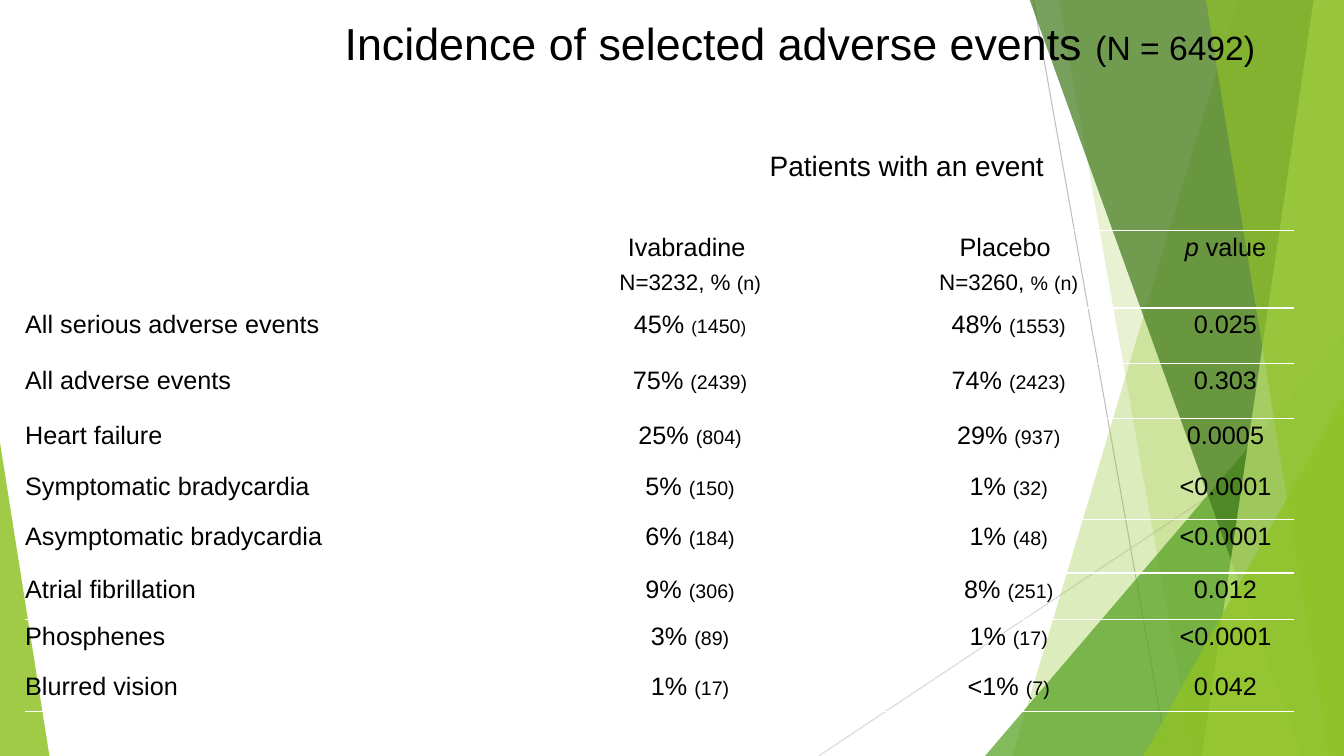
import pptx
import pptx.dml.color
import pptx.enum.shapes
import pptx.enum.text
import pptx.oxml.ns
import pptx.util
from lxml import etree
from pptx.util import Inches

WIDTH, HEIGHT = 13.33, 7.5
BLEED = -0.01
GREEN = "90C226"
CENTER = pptx.enum.text.PP_ALIGN.CENTER
LEFT = pptx.enum.text.PP_ALIGN.LEFT
COLUMN_WIDTHS = [4.91, 3.37, 2.95, 1.35]
ROW_HEIGHTS = [0.82, 0.74, 0.55, 0.55, 0.51, 0.49, 0.53, 0.46, 0.5, 0.41]
UNRULED = {0, 5, 9}  # row boundaries without a rule, counted from the top

# Event, ivabradine (percent, count), placebo (percent, count), p value
EVENTS = [
    ("All serious adverse events", ("45%", 1450), ("48%", 1553), "0.025"),
    ("All adverse events", ("75%", 2439), ("74%", 2423), "0.303"),
    ("Heart failure", ("25%", 804), ("29%", 937), "0.0005"),
    ("Symptomatic bradycardia", ("5%", 150), ("1%", 32), "<0.0001"),
    ("Asymptomatic bradycardia", ("6%", 184), ("1%", 48), "<0.0001"),
    ("Atrial fibrillation", ("9%", 306), ("8%", 251), "0.012"),
    ("Phosphenes", ("3%", 89), ("1%", 17), "<0.0001"),
    ("Blurred vision", ("1%", 17), ("<1%", 7), "0.042"),
]


def color(value):
    return pptx.dml.color.RGBColor.from_string(value)


def add_child(parent, tag, **attributes):
    return etree.SubElement(parent, pptx.oxml.ns.qn(tag), attributes)


def paint(shape, fill, opacity):
    shape.shadow.inherit = False
    shape.fill.solid()
    shape.fill.fore_color.rgb = color(fill)
    shape.line.fill.background()
    srgb = shape.fill._xPr.find(".//" + pptx.oxml.ns.qn("a:srgbClr"))
    add_child(srgb, "a:alpha", val=str(opacity * 1000))


def add_line(slide, start, end, line_color):
    line = slide.shapes.add_connector(
        pptx.enum.shapes.MSO_CONNECTOR.STRAIGHT,
        *(Inches(value) for value in start + end))
    line.line.color.rgb = color(line_color)
    line.line.width = pptx.util.Pt(0.75)
    add_child(line._element.spPr, "a:effectLst")


def add_band(slide, top_left, bottom_left, fill, opacity):
    """Band that reaches from a slanted left edge to the right of the slide."""
    builder = slide.shapes.build_freeform(Inches(top_left), Inches(BLEED))
    corners = [(WIDTH, BLEED), (WIDTH, HEIGHT), (bottom_left, HEIGHT)]
    builder.add_line_segments([(Inches(x), Inches(y)) for x, y in corners])
    paint(builder.convert_to_shape(), fill, opacity)


def add_corner(slide, left, top, width, apex, fill, opacity):
    """Triangle that stands on the bottom of the slide."""
    shape = slide.shapes.add_shape(
        pptx.enum.shapes.MSO_SHAPE.ISOSCELES_TRIANGLE,
        Inches(left), Inches(top), Inches(width), Inches(HEIGHT - top))
    shape.adjustments[0] = apex
    paint(shape, fill, opacity)


def add_run(paragraph, text, size, italic=False):
    run = paragraph.add_run()
    run.text = text
    run.font.name = "Arial"
    run.font.size = pptx.util.Pt(size)
    run.font.italic = italic
    run.font.color.rgb = color("000000")


def add_title(slide):
    box = slide.shapes.add_textbox(
        Inches(3.32), Inches(0.11), Inches(9.83), Inches(1.01))
    box.text_frame.word_wrap = True
    paragraph = box.text_frame.paragraphs[0]
    add_run(paragraph, "Incidence of selected adverse events ", 32)
    add_run(paragraph, "(N = 6492)", 24)


def fill_cell(cell, paragraphs, alignment=CENTER):
    frame = cell.text_frame
    for index, runs in enumerate(paragraphs):
        if index:
            frame.paragraphs[-1].space_after = pptx.util.Pt(4.5)
        paragraph = frame.add_paragraph() if index else frame.paragraphs[0]
        paragraph.alignment = alignment
        paragraph.line_spacing = 1.1
        for run in runs:
            add_run(paragraph, *run)


def format_cell(cell, row):
    cell.margin_left = cell.margin_top = cell.margin_right = 0
    cell.margin_bottom = Inches(0.08)
    properties = cell._tc.get_or_add_tcPr()
    edges = {"a:lnL": False, "a:lnR": False,
             "a:lnT": row not in UNRULED,
             "a:lnB": row == len(ROW_HEIGHTS) - 1 or row + 1 not in UNRULED}
    for tag, ruled in edges.items():
        edge = add_child(properties, tag, w="12700")
        if ruled:
            add_child(add_child(edge, "a:solidFill"), "a:srgbClr", val="FFFFFF")
        else:
            add_child(edge, "a:noFill")
    cell.fill.background()


def share(percent, count):
    """Percentage with its count in smaller type."""
    if count == 1450:
        return [(percent + " ", 18), ("(", 12), (str(count), 14), (")", 12)]
    return [(percent + " ", 18), (f"({count})", 14)]


def add_events_table(slide):
    table = slide.shapes.add_table(
        len(ROW_HEIGHTS), len(COLUMN_WIDTHS), Inches(0.25), Inches(1.47),
        Inches(sum(COLUMN_WIDTHS)), Inches(sum(ROW_HEIGHTS))).table
    table.first_row = table.horz_banding = False
    for column, width in zip(table.columns, COLUMN_WIDTHS):
        column.width = Inches(width)
    for index, height in enumerate(ROW_HEIGHTS):
        table.rows[index].height = Inches(height)
        for cell in table.rows[index].cells:
            format_cell(cell, index)

    # Header rows
    table.cell(0, 1).merge(table.cell(0, 3))
    fill_cell(table.cell(0, 1), [[("Patients with an event", 20)]])
    fill_cell(table.cell(1, 1), [
        [("Ivabradine ", 18)], [("N=3232, % ", 16), ("(n)", 14)]])
    fill_cell(table.cell(1, 2), [
        [("Placebo ", 18)],
        [("N=3260, ", 16), ("%", 14), (" ", 16), ("(n)", 14)]])
    fill_cell(table.cell(1, 3), [[("p", 18, True), (" value", 18)]])

    # One row for each event
    for row, (event, ivabradine, placebo, p_value) in enumerate(EVENTS, 2):
        fill_cell(table.cell(row, 0), [[(event, 18)]], LEFT)
        fill_cell(table.cell(row, 1), [share(*ivabradine)])
        fill_cell(table.cell(row, 2), [share(*placebo)])
        fill_cell(table.cell(row, 3), [[(p_value, 18)]])


def add_background(slide):
    add_line(slide, (10.25, 0), (11.58, HEIGHT), "BFBFBF")
    add_line(slide, (WIDTH, 4.03), (8.12, HEIGHT), "D9D9D9")
    add_band(slide, 12.28, 10.04, GREEN, 30)
    add_band(slide, 10.5, 11.83, GREEN, 20)
    add_corner(slide, 9.77, 3.33, 3.56, 1, "54A021", 72)
    add_band(slide, 10.21, 12.91, "3F7819", 70)
    add_band(slide, 13.03, 11.92, "C0E474", 70)
    add_band(slide, 11.96, 13.18, GREEN, 65)
    add_corner(slide, 11.34, 3.93, 1.99, 1, GREEN, 80)
    add_corner(slide, 0, 4.39, 0.49, 0, GREEN, 85)


def main():
    presentation = pptx.Presentation()
    presentation.slide_width = Inches(WIDTH)
    presentation.slide_height = Inches(HEIGHT)
    slide = presentation.slides.add_slide(presentation.slide_layouts[6])
    add_background(slide)
    add_title(slide)
    add_events_table(slide)
    presentation.save("out.pptx")


if __name__ == "__main__":
    main()
